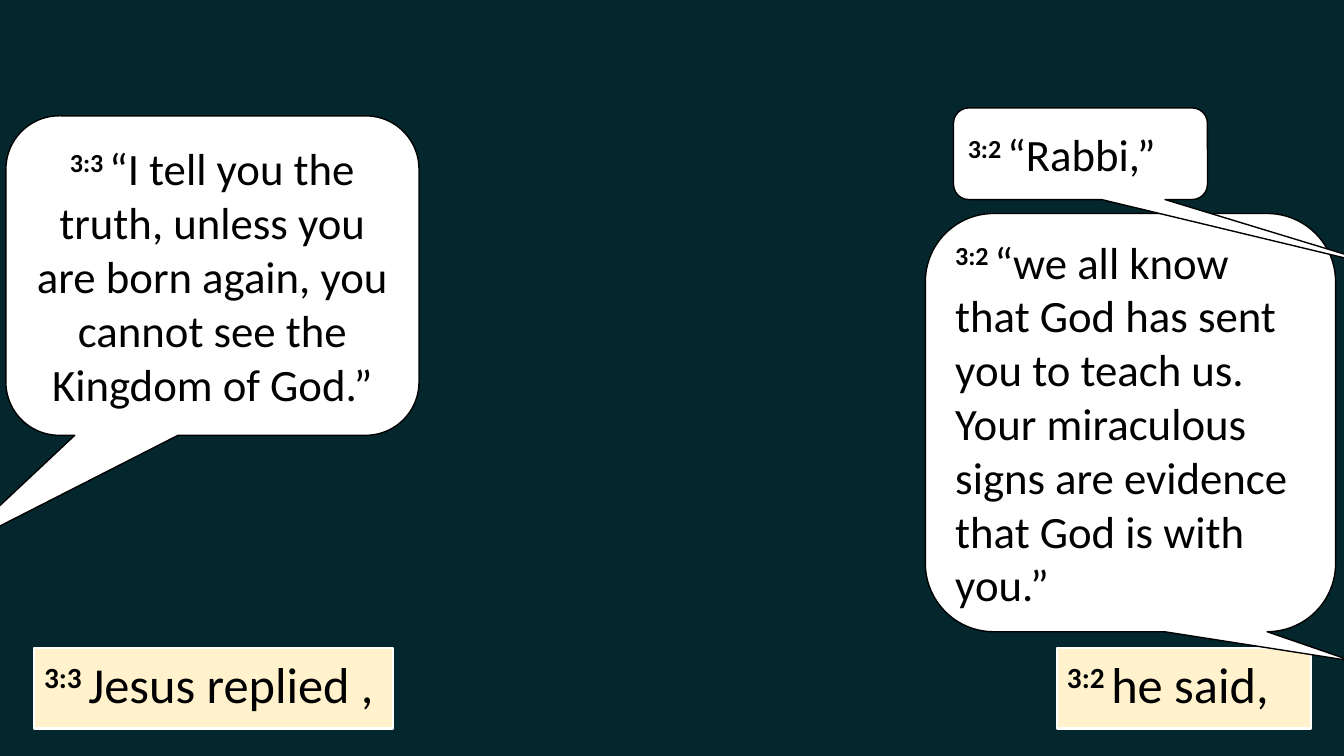
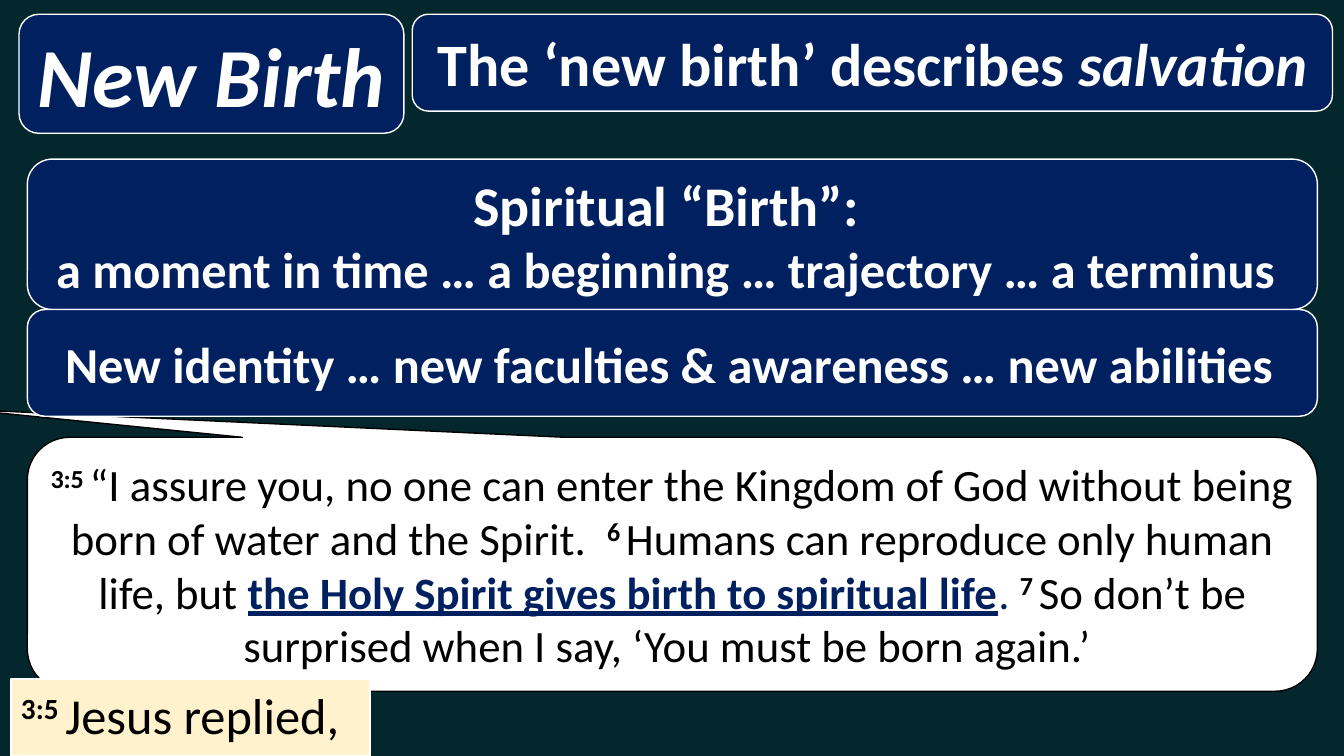
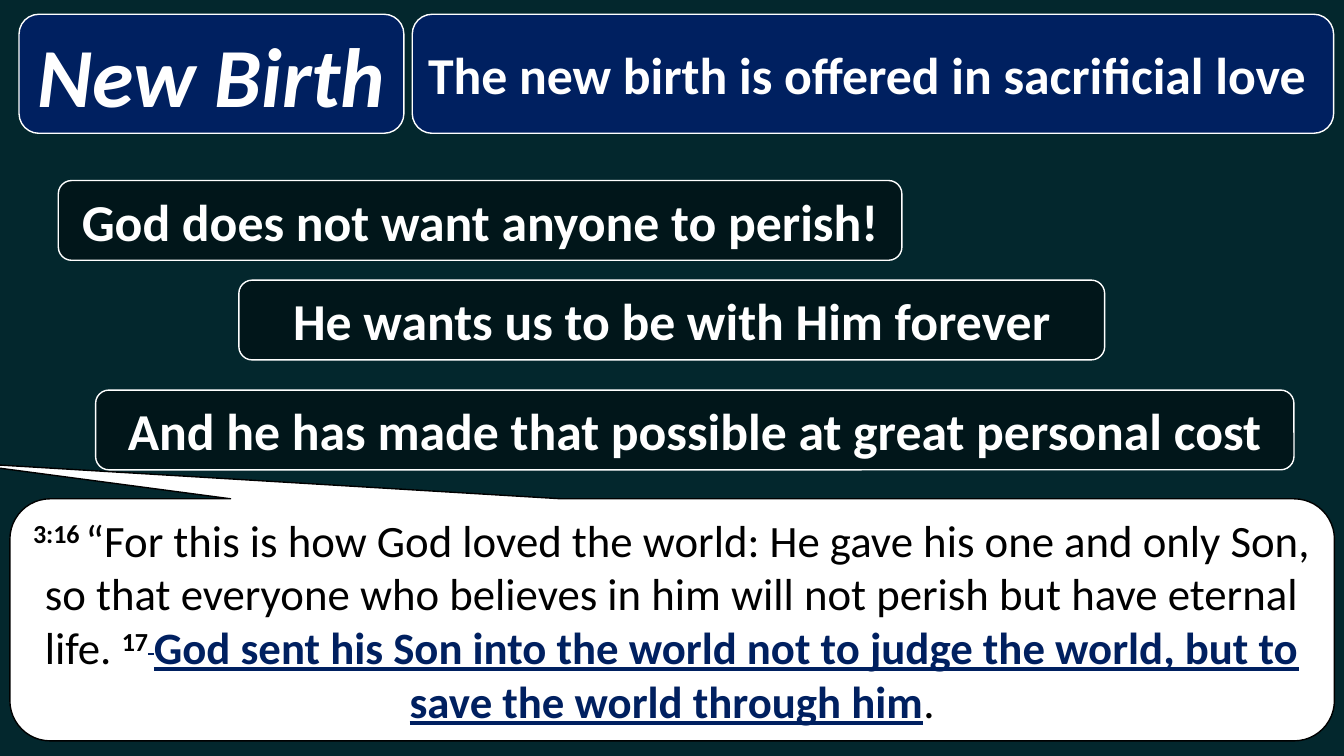
from dataclasses import dataclass

from lxml import etree
from pptx import Presentation
from pptx import util as u
from pptx.dml.color import RGBColor
from pptx.enum import shapes, text
from pptx.oxml import ns


@dataclass(frozen=True)
class Theme:
    font: str = "Calibri"
    background: str = "03272D"
    navy: str = "002060"
    cream: str = "FFF2CC"
    white: str = "FFFFFF"
    black: str = "000000"
    topic_size: int = 60
    title_size: int = 43
    heading_size: int = 40
    point_size: int = 37
    body_size: int = 36
    speech_size: int = 32
    point_opacity: int = 42
    thin_line: float = 1
    caption_line: float = 1.5


THEME = Theme()


@dataclass(frozen=True)
class Frame:
    left: float
    top: float
    width: float
    height: float


@dataclass(frozen=True)
class Span:
    text: str
    bold: bool = False
    italic: bool = False
    underline: bool = False
    raised: bool = False
    color: str = ""


@dataclass(frozen=True)
class Line:
    spans: tuple[Span, ...]
    size: int
    color: str = THEME.white
    centered: bool = False
    indent: float = 0


@dataclass(frozen=True)
class Speech:
    frame: Frame
    tail: tuple[float, float]
    spans: tuple[Span, ...]
    centered: bool = True


@dataclass(frozen=True)
class Caption:
    frame: Frame
    verse: str
    words: str


@dataclass(frozen=True)
class Panel:
    frame: Frame
    lines: tuple[Line, ...]


def verse(number: str) -> Span:
    return Span(number, bold=True, raised=True)


def stressed(words: str) -> Span:
    return Span(words, bold=True, underline=True, color=THEME.navy)


def bold_line(words: str, size: int, centered: bool = True, indent: float = 0) -> Line:
    return Line((Span(words, bold=True),), size, centered=centered, indent=indent)


def add_span(para, words: str, *, size: int, color: str, bold: bool = False,
             italic: bool = False, underline: bool = False, raised: bool = False) -> None:
    span = para.add_run()
    span.text = words
    font = span.font
    font.name = THEME.font
    font.size = u.Pt(size)
    font.bold = bold
    font.italic = italic
    font.underline = underline
    font.color.rgb = RGBColor.from_string(color)
    if raised:
        span._r.get_or_add_rPr().set("baseline", "30000")


def add_box(page, kind, frame: Frame, lines: tuple[Line, ...], *, fill: str,
            outline: str = THEME.white, weight: float = THEME.thin_line,
            opacity: int = 100, anchor=text.MSO_ANCHOR.MIDDLE):
    box = page.shapes.add_shape(kind, u.Cm(frame.left), u.Cm(frame.top),
                                u.Cm(frame.width), u.Cm(frame.height))
    box.shadow.inherit = False
    box.fill.solid()
    box.fill.fore_color.rgb = RGBColor.from_string(fill)
    if opacity < 100:
        color = box.element.spPr.find(ns.qn("a:solidFill"))[0]
        etree.SubElement(color, ns.qn("a:alpha")).set("val", str(opacity * 1000))
    box.line.color.rgb = RGBColor.from_string(outline)
    box.line.width = u.Pt(weight)
    frame_text = box.text_frame
    frame_text.word_wrap = True
    frame_text.vertical_anchor = anchor
    for index, line in enumerate(lines):
        para = frame_text.add_paragraph() if index else frame_text.paragraphs[0]
        para.alignment = text.PP_ALIGN.CENTER if line.centered else text.PP_ALIGN.LEFT
        if line.indent:
            para._p.get_or_add_pPr().set("marL", str(u.Cm(line.indent)))
        for span in line.spans:
            add_span(para, span.text, size=line.size, color=span.color or line.color,
                     bold=span.bold, italic=span.italic,
                     underline=span.underline, raised=span.raised)
    return box


def add_speech(page, speech: Speech) -> None:
    line = Line(speech.spans, THEME.speech_size, THEME.black, speech.centered)
    box = add_box(page, shapes.MSO_SHAPE.ROUNDED_RECTANGULAR_CALLOUT, speech.frame, (line,),
                  fill=THEME.white, outline=THEME.black)
    box.adjustments[0], box.adjustments[1] = speech.tail


def add_caption(page, caption: Caption) -> None:
    line = Line((verse(caption.verse), Span(caption.words)), THEME.body_size, THEME.black)
    add_box(page, shapes.MSO_SHAPE.RECTANGLE, caption.frame, (line,), fill=THEME.cream,
            weight=THEME.caption_line, anchor=text.MSO_ANCHOR.TOP)


def add_panel(page, panel: Panel, fill: str = THEME.navy, opacity: int = 100) -> None:
    add_box(page, shapes.MSO_SHAPE.ROUNDED_RECTANGLE, panel.frame, panel.lines,
            fill=fill, opacity=opacity)


def add_page(deck):
    page = deck.slides.add_slide(deck.slide_layouts[6])
    page.background.fill.solid()
    page.background.fill.fore_color.rgb = RGBColor.from_string(THEME.background)
    return page


def add_topic_page(deck):
    page = add_page(deck)
    topic = Line((Span("New Birth", bold=True, italic=True),), THEME.topic_size, centered=True)
    add_panel(page, Panel(Frame(0.48, 0.36, 9.7, 3), (topic,)))
    return page


def build_dialogue(deck) -> None:
    page = add_page(deck)
    add_speech(page, Speech(Frame(0.15, 2.92, 10.41, 8.05), (-0.63, 0.86), (
        verse("3:3 "),
        Span("“I tell you the truth, unless you are born again, you cannot see "
             "the Kingdom of God.”"),
    )))
    add_caption(page, Caption(Frame(26.64, 16.33, 6.4, 2.03), "3:2 ", "he said,"))
    add_speech(page, Speech(Frame(23.32, 5.38, 10.34, 10.54), (0.54, 0.57), (
        verse("3:2 "),
        Span("“we all know that God has sent you to teach us. Your miraculous signs "
             "are evidence that God is with you.”"),
    ), centered=False))
    add_speech(page, Speech(Frame(24.03, 2.72, 6.4, 2.31), (1.27, 1.29),
                            (verse("3:2 "), Span("“Rabbi,”")), centered=False))
    add_caption(page, Caption(Frame(0.86, 16.33, 9.04, 2.03), "3:3 ", "Jesus replied ,"))


def build_salvation(deck) -> None:
    page = add_topic_page(deck)
    add_speech(page, Speech(Frame(0.69, 11.02, 32.51, 6.4), (-0.55, -0.61), (
        verse("3:5 "),
        Span("“I assure you, no one can enter the Kingdom of God without being born "
             "of water and the Spirit.  "),
        verse("6 "),
        Span("Humans can reproduce only human life, but "),
        stressed("the Holy Spirit gives birth to spiritual life"),
        Span(". ", color=THEME.navy),
        verse("7 "),
        Span("So don’t be surprised when I say, ‘You must be born again.’ "),
    )))
    add_caption(page, Caption(Frame(0.28, 17.12, 9.04, 1.93), "3:5 ", "Jesus replied,"))
    title = Line((Span("The ‘new birth’ describes ", bold=True),
                  Span("salvation", bold=True, italic=True)), THEME.title_size, centered=True)
    add_panel(page, Panel(Frame(10.39, 0.36, 23.19, 2.44), (title,)))
    add_panel(page, Panel(Frame(0.69, 4.01, 32.51, 3.79), (
        bold_line("Spiritual “Birth”: ", THEME.heading_size),
        bold_line("a moment in time … a beginning … trajectory … a terminus",
                  THEME.body_size, centered=False, indent=0.29),
    )))
    add_panel(page, Panel(Frame(0.69, 7.8, 32.51, 2.69), (
        bold_line("New identity … new faculties & awareness … new abilities",
                  THEME.body_size, centered=False, indent=0.57),
    )))


def build_love(deck) -> None:
    page = add_topic_page(deck)
    add_speech(page, Speech(Frame(0.25, 12.57, 33.38, 6.1), (-0.54, -0.65), (
        verse("3:16 "),
        Span("“For this is how God loved the world: He gave his one and only Son, so that "
             "everyone who believes in him will not perish but have eternal life. "),
        verse("17"),
        Span(" ", bold=True, underline=True, raised=True, color=THEME.navy),
        stressed("God sent his Son into the world not to judge the world, but to save "
                 "the world through him"),
        Span("."),
    )))
    add_panel(page, Panel(Frame(10.39, 0.36, 23.22, 3), (
        bold_line("The new birth is offered in sacrificial love ", THEME.point_size),
    )))
    points = (
        (1.47, 4.55, 21.26, "God does not want anyone to perish!"),
        (6.02, 7.06, 21.82, "He wants us to be with Him forever"),
        (2.41, 9.83, 30.2, "And he has made that possible at great personal cost"),
    )
    for left, top, width, words in points:
        add_panel(page, Panel(Frame(left, top, width, 2.01),
                              (bold_line(words, THEME.point_size),)),
                  fill=THEME.black, opacity=THEME.point_opacity)


def main() -> None:
    deck = Presentation()
    deck.slide_width, deck.slide_height = u.Cm(33.87), u.Cm(19.05)
    for build in (build_dialogue, build_salvation, build_love):
        build(deck)
    deck.save("out.pptx")


if __name__ == "__main__":
    main()
